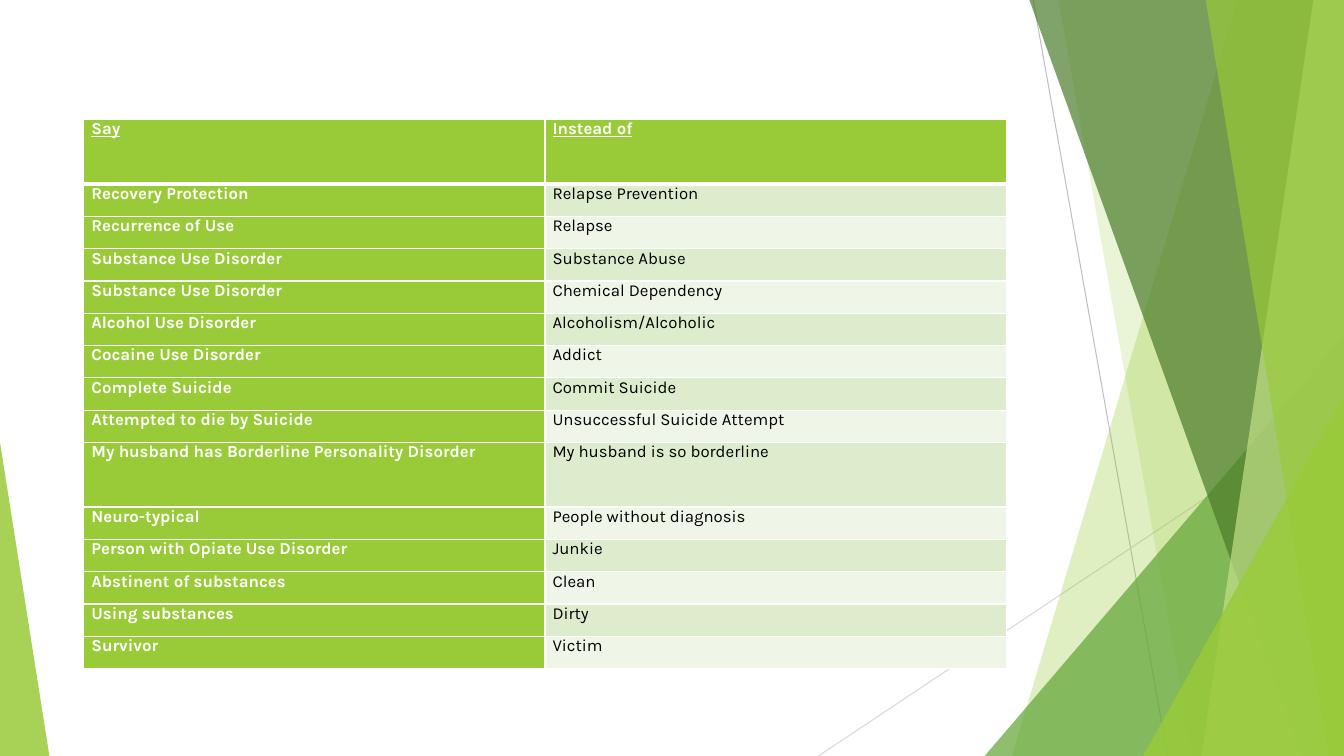
from lxml import etree
from pptx import Presentation
from pptx.dml.color import RGBColor
from pptx.enum.shapes import MSO_CONNECTOR as Connector, MSO_SHAPE as Shape
from pptx.oxml.ns import qn
from pptx.util import Pt

WIDTH, HEIGHT, TOP = 960, 540, -0.6
WHITE = RGBColor(0xFF, 0xFF, 0xFF)
BLACK = RGBColor(0x00, 0x00, 0x00)
GREY = RGBColor(0xBF, 0xBF, 0xBF)
LIGHT_GREY = RGBColor(0xD9, 0xD9, 0xD9)
LIME = RGBColor(0x99, 0xCB, 0x38)
PALE_LIME = RGBColor(0xC2, 0xE0, 0x88)
GREEN = RGBColor(0x63, 0xA5, 0x37)
DARK_GREEN = RGBColor(0x4A, 0x7C, 0x29)
BANDS = (RGBColor(0xDE, 0xEC, 0xCE), RGBColor(0xEF, 0xF6, 0xE8))

PHRASES = [
    ("Say", "Instead of"),
    ("Recovery Protection", "Relapse Prevention"),
    ("Recurrence of Use", "Relapse"),
    ("Substance Use Disorder", "Substance Abuse"),
    ("Substance Use Disorder", "Chemical Dependency"),
    ("Alcohol Use Disorder", "Alcoholism/Alcoholic"),
    ("Cocaine Use Disorder", "Addict"),
    ("Complete Suicide", "Commit Suicide"),
    ("Attempted to die by Suicide", "Unsuccessful Suicide Attempt"),
    ("My husband has Borderline Personality Disorder", "My husband is so borderline"),
    ("Neuro-typical", "People without diagnosis"),
    ("Person with Opiate Use Disorder", "Junkie"),
    ("Abstinent of substances", "Clean"),
    ("Using substances", "Dirty"),
    ("Survivor", "Victim"),
]
TALL_ROWS = (0, 9)
ROW_HEIGHT = 23.08


class SlideBuilder:
    """Holds the text style and the slide being built."""

    def __init__(self, slide):
        self.slide = slide
        self.text_style = {"name": "Karla", "size": Pt(12)}
        self.cell_format = {"margin_left": Pt(5.4), "margin_right": Pt(5.4),
                            "margin_top": 0, "margin_bottom": 0}

    def line(self, start, end, color):
        points = [Pt(value) for value in (*start, *end)]
        connector = self.slide.shapes.add_connector(Connector.STRAIGHT, *points)
        connector.line.color.rgb = color
        connector.line.width = Pt(0.75)
        etree.SubElement(connector._element.spPr, qn("a:effectLst"))

    def paint(self, shape, color, opacity):
        shape.shadow.inherit = False
        shape.fill.solid()
        shape.fill.fore_color.rgb = color
        shape.line.fill.background()
        fill_color = shape._element.spPr.find(qn("a:solidFill"))[0]
        etree.SubElement(fill_color, qn("a:alpha"), val=str(opacity * 1000))

    def panel(self, top_left, bottom_left, color, opacity):
        """A full-height panel that reaches the right edge of the slide."""
        corners = [(WIDTH, TOP), (WIDTH, HEIGHT), (bottom_left, HEIGHT)]
        builder = self.slide.shapes.build_freeform(Pt(top_left), Pt(TOP))
        builder.add_line_segments([(Pt(x), Pt(y)) for x, y in corners], close=True)
        self.paint(builder.convert_to_shape(), color, opacity)

    def triangle(self, left, top, width, apex, color, opacity):
        """A triangle that stands on the bottom edge of the slide."""
        box = [Pt(value) for value in (left, top, width, HEIGHT - top)]
        shape = self.slide.shapes.add_shape(Shape.ISOSCELES_TRIANGLE, *box)
        shape.adjustments[0] = apex
        self.paint(shape, color, opacity)

    def borders(self, cell, widths):
        properties = cell._tc.get_or_add_tcPr()
        for index, (side, width) in enumerate(widths.items()):
            line = etree.Element(qn(f"a:ln{side}"), w=str(Pt(width)))
            fill = etree.SubElement(line, qn("a:solidFill"))
            etree.SubElement(fill, qn("a:srgbClr"), val=str(WHITE))
            properties.insert(index, line)

    def cell(self, cell, text, fill, font_format):
        for name, value in self.cell_format.items():
            setattr(cell, name, value)
        cell.fill.solid()
        cell.fill.fore_color.rgb = fill
        run = cell.text_frame.paragraphs[0].add_run()
        run.text = text
        color = WHITE if fill == LIME else BLACK
        run.font.color.rgb = color
        for name, value in {**self.text_style, **font_format}.items():
            setattr(run.font, name, value)

    def table(self, left, top, width, rows):
        heights = [ROW_HEIGHT * (2 if index in TALL_ROWS else 1)
                   for index in range(len(rows))]
        box = [Pt(value) for value in (left, top, width, sum(heights))]
        table = self.slide.shapes.add_table(len(rows), len(rows[0]), *box).table
        for row_index, texts in enumerate(rows):
            table.rows[row_index].height = Pt(heights[row_index])
            header = row_index == 0
            widths = {"L": 1, "R": 1, "T": 3 if row_index == 1 else 1,
                      "B": 3 if header else 1}
            for column_index, text in enumerate(texts):
                strong = header or column_index == 0
                fill = LIME if strong else BANDS[(row_index - 1) % 2]
                cell = table.cell(row_index, column_index)
                self.cell(cell, text, fill, {"bold": strong, "underline": header})
                self.borders(cell, widths)


def main():
    presentation = Presentation()
    presentation.slide_width, presentation.slide_height = Pt(WIDTH), Pt(HEIGHT)
    slide = presentation.slides.add_slide(presentation.slide_layouts[6])
    builder = SlideBuilder(slide)

    # Thin lines behind the facets
    builder.line((738, 0), (834, HEIGHT), GREY)
    builder.line((WIDTH, 290), (584.6, HEIGHT), LIGHT_GREY)

    # Green facets, back to front
    builder.panel(884.2, 722.9, LIME, 30)
    builder.panel(756, 851.8, LIME, 20)
    builder.triangle(703.4, 239.8, 256.6, 1, GREEN, 72)
    builder.panel(735.1, 929.5, DARK_GREEN, 70)
    builder.panel(938.2, 858.2, PALE_LIME, 70)
    builder.panel(861.1, 949, LIME, 65)
    builder.triangle(816.5, 283, 143.5, 1, LIME, 80)
    builder.triangle(0, 316, 35.3, 0, LIME, 85)

    # Table of preferred wording
    builder.table(59.9, 85.3, 658.8, PHRASES)

    presentation.save("out.pptx")


if __name__ == "__main__":
    main()
